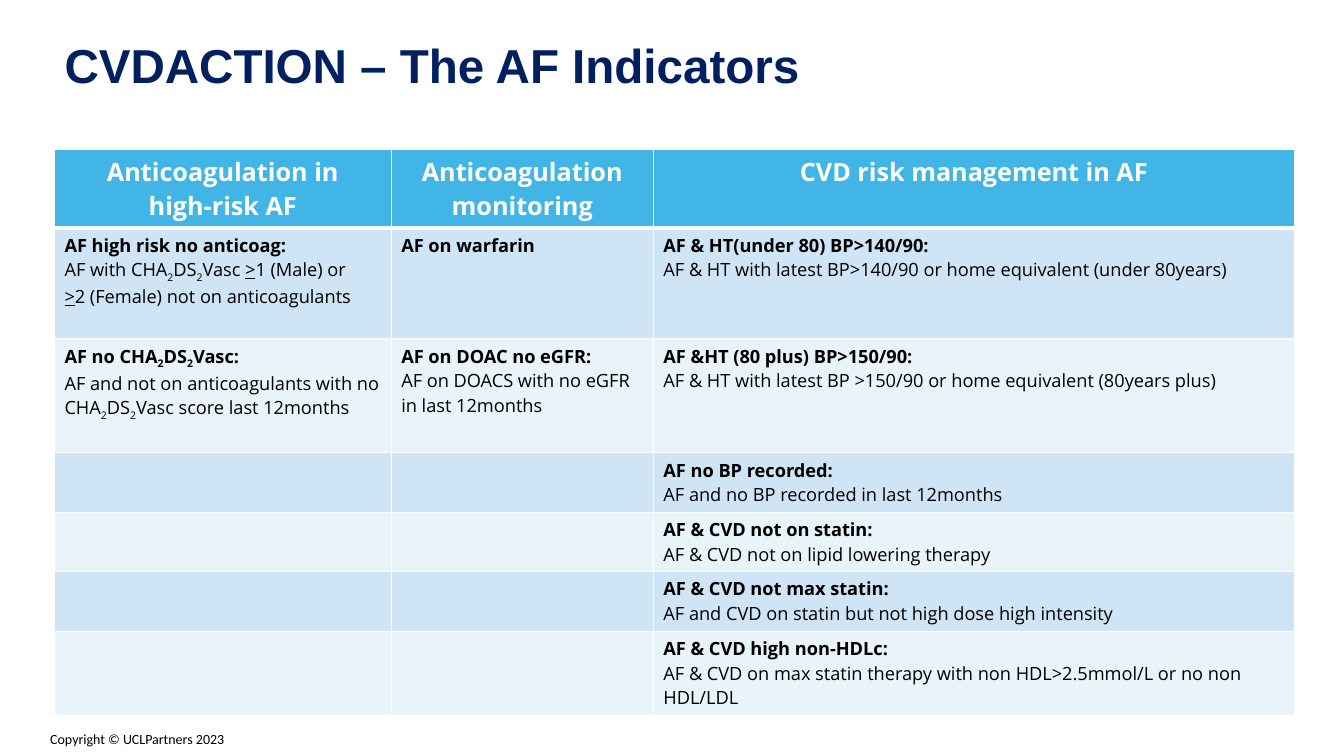
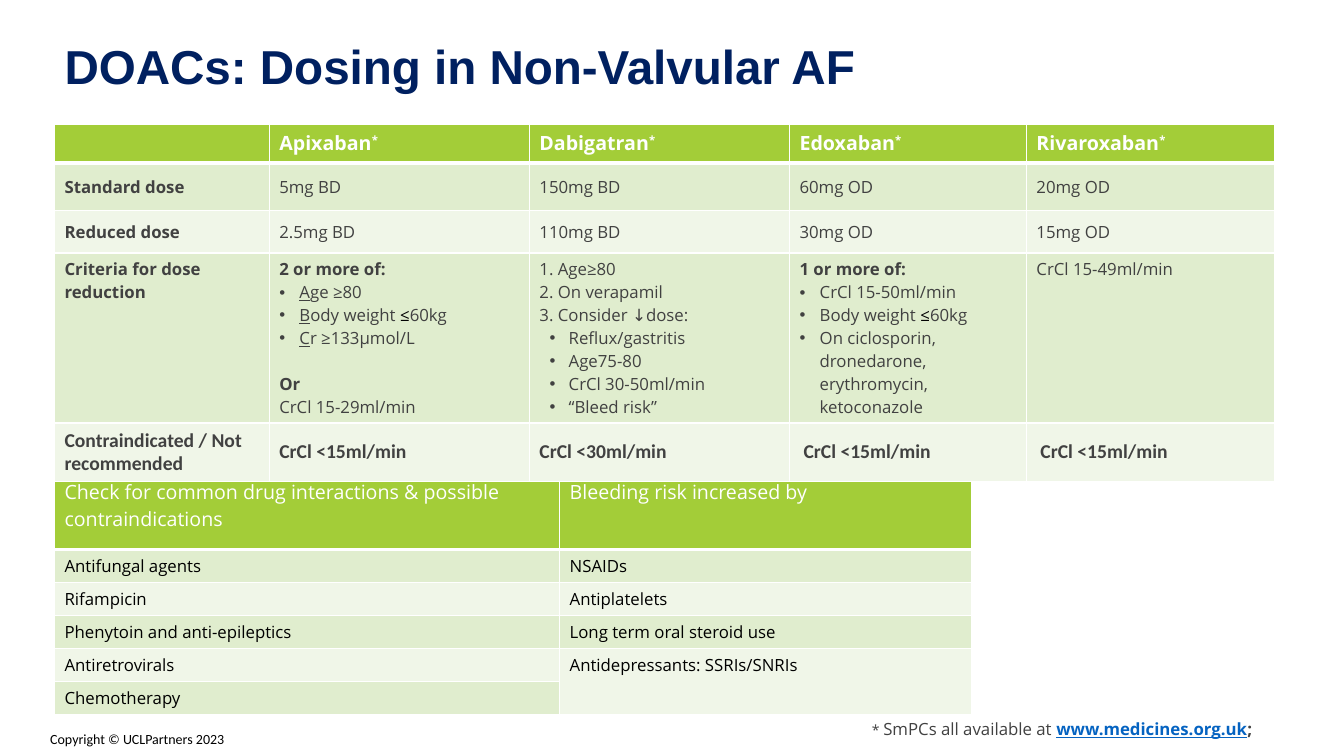
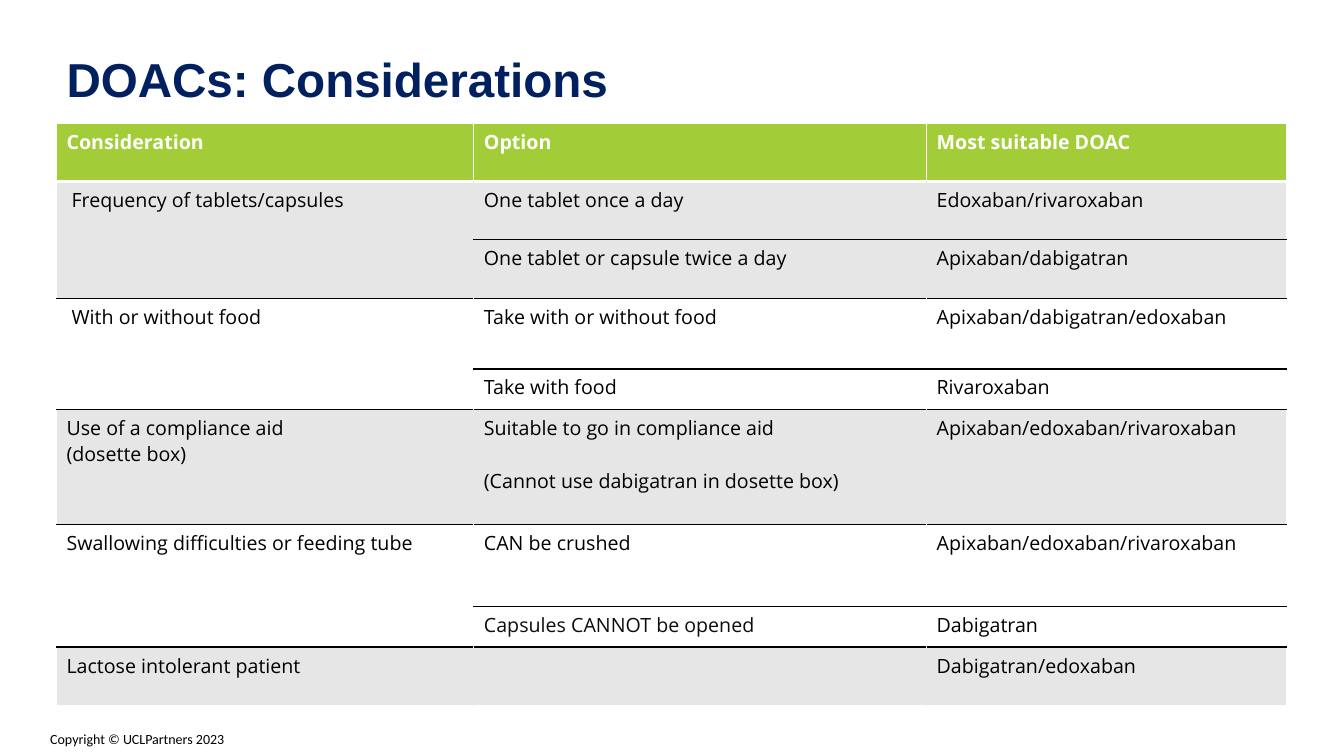
"""Build three slides on atrial fibrillation indicators and DOAC dosing."""
from dataclasses import dataclass, field
from typing import NamedTuple, Optional, Union

from lxml import etree
from pptx import Presentation
from pptx import util as u
from pptx.dml import color as dml
from pptx.enum import text as txt
from pptx.oxml import ns

NAVY, BLACK, WHITE, CHARCOAL = "002060", "000000", "FFFFFF", "414141"
BLUE, PALE_BLUE, ICE = "41B6E6", "CFE5F5", "E9F3FA"
GREEN, PALE_GREEN, MINT = "A3CD38", "E0EDCE", "F0F6E8"
GREY, LINK = "E7E6E6", "0563C1"
BODY_FONT = "Open Sans"


class Style(NamedTuple):
    size: float
    color: str
    bold: bool = False
    font: str = BODY_FONT


class Span(NamedTuple):
    text: str
    bold: Optional[bool] = None
    underline: bool = False
    base: int = 0
    color: Optional[str] = None
    size: Optional[float] = None


class Para(NamedTuple):
    spans: list[Span]
    bullet: Optional[tuple[float, float]] = None
    before: float = 0


@dataclass
class Entry:
    paras: list[Para]
    left: float = 0.1
    right: float = 0.1
    middle: bool = False
    style: Optional[Style] = None


Content = Union[str, Entry, None]


@dataclass
class Grid:
    left: float
    top: float
    widths: list[float]
    heights: list[float]
    fills: list[str]
    head: Style
    body: Style
    rows: list[list[Content]] = field(default_factory=list)
    rule: str = WHITE
    seamless: bool = False
    head_align: txt.PP_ALIGN = txt.PP_ALIGN.LEFT


def rgb(value: str) -> dml.RGBColor:
    return dml.RGBColor.from_string(value)


def line(*parts: Union[str, Span], bullet: Optional[tuple[float, float]] = None,
         before: float = 0) -> Para:
    spans = [Span(part) if isinstance(part, str) else part for part in parts]
    return Para(spans, bullet, before)


def bold(text: str) -> Span:
    return Span(text, bold=True)


def under(text: str) -> Span:
    return Span(text, underline=True)


def entry(*paras: Union[str, Para], **options) -> Entry:
    return Entry([line(p) if isinstance(p, str) else p for p in paras], **options)


def indicator(name: str, rule: str) -> Entry:
    return entry(line(bold(name)), rule)


def middle(text: str, strong: bool = False) -> Entry:
    return entry(line(Span(text, bold=strong)), middle=True)


def starred(drug: str) -> Entry:
    return entry(line(drug, Span("*", base=30)))


def score(before: str, after: str, strong: bool = False) -> list[Span]:
    two = Span("2", strong, base=-25)
    return [Span(f"{before}CHA", strong), two, Span("DS", strong), two,
            Span(f"Vasc{after}", strong)]


def add_span(para, text: str, *, size: float, color: str, font: str = BODY_FONT,
             bold: bool = False, underline: bool = False, base: int = 0) -> None:
    span = para.add_run()
    span.text = text
    span.font.size = u.Pt(size)
    span.font.name = font
    span.font.bold = bold
    span.font.underline = underline
    span.font.color.rgb = rgb(color)
    if base:
        span._r.get_or_add_rPr().set("baseline", str(base * 1000))


def add_bullet(para, left: float, hang: float) -> None:
    props = para._p.get_or_add_pPr()
    props.set("marL", str(u.Inches(left)))
    props.set("indent", str(-u.Inches(hang)))
    etree.SubElement(props, ns.qn("a:buFont")).set("typeface", "Arial")
    etree.SubElement(props, ns.qn("a:buChar")).set("char", "•")


def fill_frame(frame, paras: list[Para], style: Style,
               align: txt.PP_ALIGN = txt.PP_ALIGN.LEFT) -> None:
    for index, item in enumerate(paras):
        para = frame.add_paragraph() if index else frame.paragraphs[0]
        if item.bullet:
            add_bullet(para, *item.bullet)
        para.alignment = align
        if item.before:
            para.space_before = u.Pt(item.before)
        for span in item.spans:
            add_span(para, span.text, size=span.size or style.size,
                     color=span.color or style.color, font=style.font,
                     bold=style.bold if span.bold is None else span.bold,
                     underline=span.underline, base=span.base)


def set_edge(cell, side: str, color: str, width: float = 1) -> None:
    edge = etree.SubElement(cell._tc.get_or_add_tcPr(), ns.qn(f"a:ln{side}"))
    edge.set("w", str(u.Pt(width)))
    solid = etree.SubElement(edge, ns.qn("a:solidFill"))
    etree.SubElement(solid, ns.qn("a:srgbClr")).set("val", color)


def set_edges(cell, grid: Grid, row: int, column: int) -> None:
    inner = grid.fills[row] if grid.seamless and row else WHITE
    set_edge(cell, "L", inner if column else WHITE)
    set_edge(cell, "R", inner if column < len(grid.widths) - 1 else WHITE)
    set_edge(cell, "T", grid.rule if row > 1 else WHITE, 3 if row == 1 else 1)
    last = row == len(grid.heights) - 1
    set_edge(cell, "B", WHITE if last or not row else grid.rule, 1 if row else 3)


def fill_cell(cell, content: Union[str, Entry], grid: Grid, row: int) -> None:
    cell.fill.solid()
    cell.fill.fore_color.rgb = rgb(grid.fills[row])
    if content == "":
        cell.margin_top = cell.margin_bottom = 0
        return
    item = entry(content) if isinstance(content, str) else content
    cell.margin_left, cell.margin_right = u.Inches(item.left), u.Inches(item.right)
    cell.vertical_anchor = txt.MSO_ANCHOR.MIDDLE if item.middle else txt.MSO_ANCHOR.TOP
    style = item.style or (grid.body if row else grid.head)
    align = txt.PP_ALIGN.LEFT if row else grid.head_align
    fill_frame(cell.text_frame, item.paras, style, align)


def add_grid(page, grid: Grid) -> None:
    frame = page.shapes.add_table(
        len(grid.heights), len(grid.widths), u.Inches(grid.left), u.Inches(grid.top),
        u.Inches(sum(grid.widths)), u.Inches(sum(grid.heights)))
    table = frame.table
    table.first_row = table.horz_banding = False
    for column, width in zip(table.columns, grid.widths):
        column.width = u.Inches(width)
    for row, height in zip(table.rows, grid.heights):
        row.height = u.Inches(height)
    for r, contents in enumerate(grid.rows):
        for c, content in enumerate(contents):
            cell = table.cell(r, c)
            if content is None:
                table.cell(r - 1, c).merge(cell)
                continue
            set_edges(cell, grid, r, c)
            fill_cell(cell, content, grid, r)


def add_text(page, left: float, top: float, width: float, height: float,
             para: Para, style: Style, wrap: bool = True):
    box = page.shapes.add_textbox(*map(u.Inches, (left, top, width, height)))
    box.text_frame.word_wrap = wrap
    fill_frame(box.text_frame, [para], style)
    return box


def add_page(deck, title: str, left: float, top: float, width: float, height: float):
    page = deck.slides.add_slide(deck.slide_layouts[5])
    box = page.shapes.title
    box.left, box.top, box.width, box.height = map(u.Inches, (left, top, width, height))
    frame = box.text_frame
    frame.auto_size = txt.MSO_AUTO_SIZE.NONE
    frame.vertical_anchor = txt.MSO_ANCHOR.TOP
    fill_frame(frame, [line(title)], Style(34, NAVY, True, "Arial"))
    frame.paragraphs[0].line_spacing = 0.9
    return page


def share_footer(page) -> None:
    box = add_text(page, 0.4, 7.2, 1.96, 0.27, line("Copyright © UCLPartners 2023"),
                   Style(10, BLACK, font="Calibri"), wrap=False)
    box.element.nvSpPr.cNvPr.set("id", "99")
    page.slide_layout.shapes.element.append(box.element)


def indicators_grid() -> Grid:
    return Grid(
        0.54, 1.48, [3.34, 2.6, 6.36], [0.78, 1.1, 1.13, 0.59, 0.59, 0.59, 0.83],
        [BLUE] + [PALE_BLUE, ICE] * 3, Style(18, WHITE, True), Style(13, BLACK),
        head_align=txt.PP_ALIGN.CENTER,
        rows=[
            [entry("Anticoagulation in", "high-risk AF"), "Anticoagulation monitoring",
             "CVD risk management in AF"],
            [entry(line(bold("AF high risk no anticoag:")),
                   line(*score("AF with ", " "), under(">"), "1 (Male) or"),
                   line(under(">"), "2 (Female) not on anticoagulants")),
             entry(line(bold("AF on warfarin"))),
             indicator("AF & HT(under 80) BP>140/90:",
                       "AF & HT with latest BP>140/90 or home equivalent (under 80years)")],
            [entry(line(*score("AF no ", ":", True)),
                   line(*score("AF and not on anticoagulants with no ",
                               " score last 12months"))),
             indicator("AF on DOAC no eGFR:", "AF on DOACS with no eGFR in last 12months"),
             indicator("AF &HT (80 plus) BP>150/90:",
                       "AF & HT with latest BP >150/90 or home equivalent (80years plus)")],
            ["", "", indicator("AF no BP recorded:",
                               "AF and no BP recorded in last 12months")],
            ["", "", indicator("AF & CVD not on statin:",
                               "AF & CVD not on lipid lowering therapy")],
            ["", "", indicator("AF & CVD not max statin:",
                               "AF and CVD on statin but not high dose high intensity")],
            ["", "", indicator("AF & CVD high non-HDLc:",
                               "AF & CVD on max statin therapy with non HDL>2.5mmol/L "
                               "or no non HDL/LDL")],
        ])


def interactions_grid() -> Grid:
    return Grid(
        0.54, 4.7, [5.01, 4.09], [0.75] + [0.32] * 5,
        [GREEN, PALE_GREEN, MINT, PALE_GREEN, MINT, PALE_GREEN],
        Style(14, WHITE), Style(12, BLACK),
        rows=[
            ["Check for common drug interactions & possible contraindications",
             "Bleeding risk increased by"],
            ["Antifungal agents", "NSAIDs"],
            ["Rifampicin", "Antiplatelets"],
            ["Phenytoin and anti-epileptics", "Long term oral steroid use"],
            ["Antiretrovirals", "Antidepressants: SSRIs/SNRIs"],
            ["Chemotherapy", None],
        ])


def dosing_grid() -> Grid:
    point, subpoint = (0.2, 0.2), (0.29, 0.19)
    at_most = Span("≤", color=BLACK)
    warning = Style(14, CHARCOAL, True, "Calibri")
    limits = [("Contraindicated / Not recommended", 0.1), ("CrCl <15ml/min", 0.1),
              ("CrCl <30ml/min", 0.1), ("CrCl <15ml/min", 0.14), ("CrCl <15ml/min", 0.14)]
    doses = [["Standard dose", "5mg BD", "150mg BD", "60mg OD", "20mg OD"],
             ["Reduced dose", "2.5mg BD", "110mg BD", "30mg OD", "15mg OD"]]
    drugs = ["Apixaban", "Dabigatran", "Edoxaban", "Rivaroxaban"]
    criteria = [
        entry(line(bold("Criteria for dose reduction"))),
        entry(line(bold("2 or more of:")),
              line(under("A"), "ge ≥80", bullet=point),
              line(under("B"), "ody weight ", at_most, "60kg", bullet=point),
              line(under("C"), "r ≥133μmol/L", bullet=point),
              line(bold("Or"), before=16.3),
              "CrCl 15-29ml/min"),
        entry("1. Age≥80", "2. On verapamil", "3. Consider ↓dose:",
              *(line(risk, bullet=subpoint) for risk in
                ("Reflux/gastritis", "Age75-80", "CrCl 30-50ml/min", "“Bleed risk”"))),
        entry(line(bold("1 or more of:")),
              line("CrCl 15-50ml/min", bullet=point),
              line("Body weight ", at_most, "60kg", bullet=point),
              line("On ciclosporin, dronedarone, erythromycin, ketoconazole", bullet=point),
              right=0.04),
        "CrCl 15-49ml/min",
    ]
    return Grid(
        0.54, 1.23, [2.13, 2.58, 2.58, 2.35, 2.46], [0.39, 0.47, 0.42, 1.68, 0.58],
        [GREEN] + [PALE_GREEN, MINT] * 2, Style(14, WHITE, True), Style(12, CHARCOAL),
        rows=[
            ["", *map(starred, drugs)],
            *([middle(text, not index) for index, text in enumerate(row)] for row in doses),
            criteria,
            [entry(text, left=left, middle=True, style=warning) for text, left in limits],
        ])


def considerations_grid() -> Grid:
    return Grid(
        0.56, 1.22, [4.14, 4.49, 3.57],
        [0.58, 0.58, 0.58, 0.7, 0.4, 1.14, 0.82, 0.4, 0.58],
        [GREEN, GREY, GREY, WHITE, WHITE, GREY, WHITE, WHITE, GREY],
        Style(14, WHITE, True), Style(14, BLACK), rule=BLACK, seamless=True,
        rows=[
            ["Consideration", "Option", "Most suitable DOAC"],
            [entry("Frequency of tablets/capsules", left=0.15),
             "One tablet once a day", "Edoxaban/rivaroxaban"],
            [None, "One tablet or capsule twice a day", "Apixaban/dabigatran"],
            [entry("With or without food", left=0.15),
             "Take with or without food", "Apixaban/dabigatran/edoxaban"],
            [None, "Take with food", "Rivaroxaban"],
            [entry("Use of a compliance aid", "(dosette box)"),
             entry("Suitable to go in compliance aid",
                   line("(Cannot use dabigatran in dosette box)", before=19)),
             "Apixaban/edoxaban/rivaroxaban"],
            ["Swallowing difficulties or feeding tube", "CAN be crushed",
             "Apixaban/edoxaban/rivaroxaban"],
            [None, entry(line(Span("Capsules CANNOT be opened", color="0D0D0D"))),
             "Dabigatran"],
            ["Lactose intolerant patient", "", "Dabigatran/edoxaban"],
        ])


def main() -> None:
    deck = Presentation()
    deck.slide_width, deck.slide_height = u.Inches(13.33), u.Inches(7.5)

    page = add_page(deck, "CVDACTION – The AF Indicators", 0.54, 0.37, 10.39, 0.6)
    share_footer(page)
    add_grid(page, indicators_grid())

    page = add_page(deck, "DOACs: Dosing in Non-Valvular AF", 0.54, 0.38, 10.34, 0.71)
    add_grid(page, interactions_grid())
    add_grid(page, dosing_grid())
    source = line(Span("* ", size=10), "SmPCs all available at ",
                  Span("www.medicines.org.uk", True, True, color=LINK), bold(";"))
    add_text(page, 8.55, 7.08, 4.34, 0.41, source, Style(12, CHARCOAL))

    page = add_page(deck, "DOACs: Considerations", 0.56, 0.51, 8.81, 0.71)
    add_grid(page, considerations_grid())

    deck.save("out.pptx")


if __name__ == "__main__":
    main()
